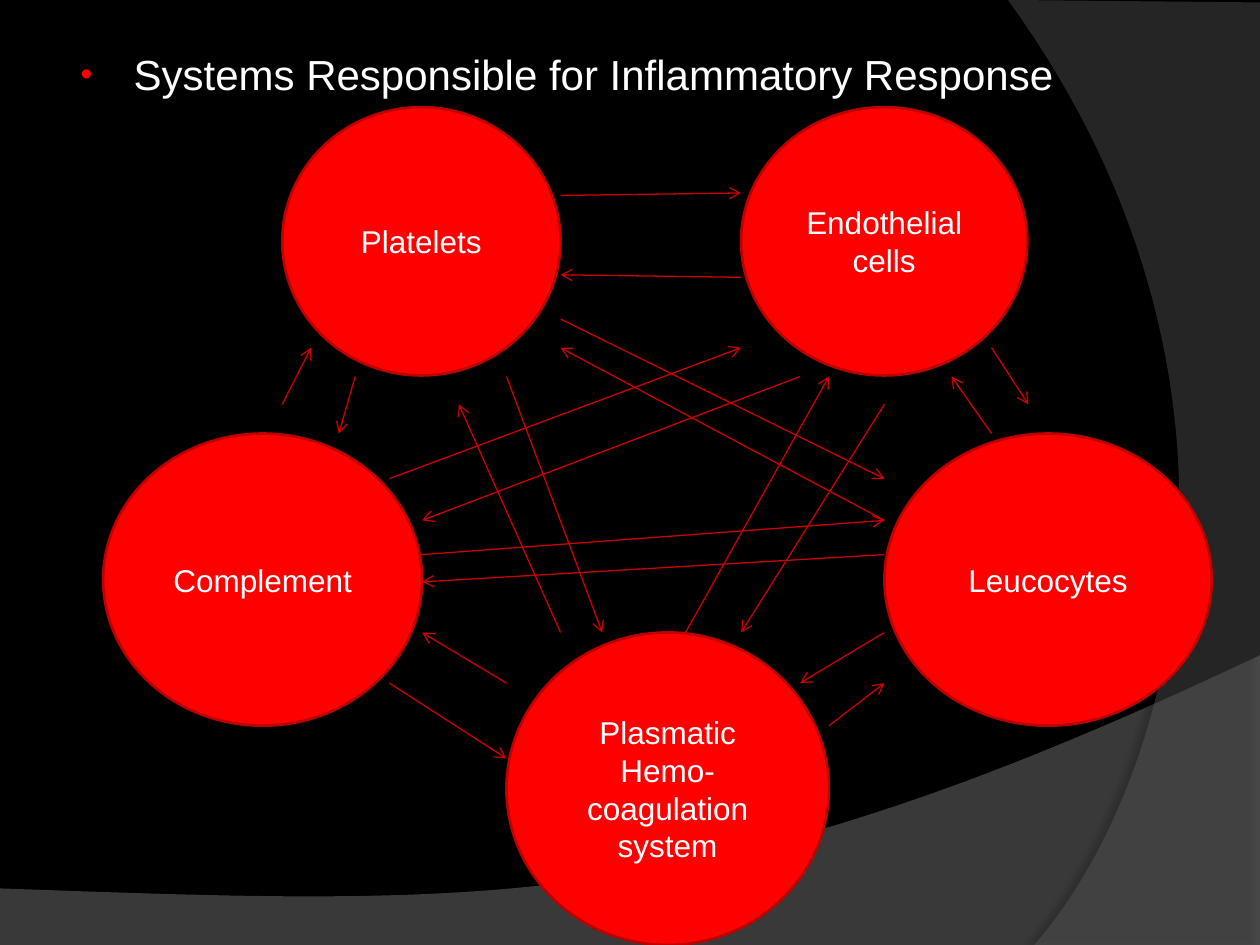
from lxml import etree
from pptx import Presentation
from pptx import util as u
from pptx.dml.color import RGBColor
from pptx.enum import shapes, text
from pptx.oxml import parse_xml
from pptx.oxml.ns import qn, nsdecls

BLACK = RGBColor(0x00, 0x00, 0x00)
WHITE = RGBColor(0xFF, 0xFF, 0xFF)
RED = RGBColor(0xFF, 0x00, 0x00)
EDGE = RGBColor(0xBD, 0x00, 0x00)
ARROW = RGBColor(0xCC, 0x00, 0x00)
GREY = RGBColor(0x7F, 0x7F, 0x7F)
DARK = RGBColor(0x5E, 0x5E, 0x5E)


def write(shape, words, size=18, color=WHITE, align=text.PP_ALIGN.CENTER,
          anchor=text.MSO_ANCHOR.MIDDLE):
    frame = shape.text_frame
    frame.word_wrap = True
    frame.auto_size = text.MSO_AUTO_SIZE.NONE
    frame.vertical_anchor = anchor
    para = frame.paragraphs[0]
    para.alignment = align
    run = para.add_run()
    run.text = words
    run.font.size = u.Pt(size)
    run.font.name = "Arial"
    run.font.color.rgb = color
    return para


def curve(start, c1, c2, end, steps=60):
    """Points along a cubic curve, both ends included."""
    for i in range(steps + 1):
        t = i / steps
        s = 1 - t
        yield tuple(s**3 * a + 3 * s * s * t * b + 3 * s * t * t * c + t**3 * d
                    for a, b, c, d in zip(start, c1, c2, end))


deck = Presentation()
deck.slide_width, deck.slide_height = u.Cm(25.4), u.Cm(19.05)
slide = deck.slides.add_slide(deck.slide_layouts[1])
slide.background.fill.solid()
slide.background.fill.fore_color.rgb = BLACK
items = slide.shapes
title = items.title._element
title.getparent().remove(title)

# Background waves: corners, curve, colour, opacity, then shadow opacity, blur, distance, angle
waves = [
    ([(0, 17.91), (0, 19.08)],
     [(25.4, 13.21), (14.2, 18.52), (9.93, 18.26), (0, 17.91)],
     [(25.4, 19.08)], GREY, 45, (35, 4, 3.5, 270)),
    ([(25.4, 0.05), (25.4, 19.05)],
     [(20.85, 19.05), (23.75, 15.72), (25.86, 7.62), (20.32, 0)],
     [], DARK, 40, (45, 4, 4, 180)),
]
for first, bend, more, color, alpha, (dim, blur, dist, angle) in waves:
    points = [(u.Cm(x), u.Cm(y)) for x, y in first + more + list(curve(*bend))]
    pen = items.build_freeform(*points[0])
    pen.add_line_segments(points[1:], close=True)
    wave = pen.convert_to_shape()
    wave.fill.solid()
    wave.fill.fore_color.rgb = color
    wave.line.fill.background()
    wave.shadow.inherit = False
    props = wave._element.spPr
    tint = props.find(qn("a:solidFill"))[0]
    etree.SubElement(tint, qn("a:alpha"), val=str(alpha * 1000))
    props.find(qn("a:effectLst")).append(parse_xml(
        f'<a:outerShdw {nsdecls("a")} blurRad="{u.Pt(blur)}" dist="{u.Pt(dist)}" '
        f'dir="{angle * 60000}" algn="ctr" rotWithShape="0"><a:srgbClr val="{BLACK}">'
        f'<a:alpha val="{dim * 1000}"/></a:srgbClr></a:outerShdw>'))

# Heading, in front of the waves
body = slide.placeholders[1]
items._spTree.append(body._element)
body.left, body.top = u.Cm(1.27), u.Cm(0.86)
body.width, body.height = u.Cm(23.16), u.Cm(17.35)
head = write(body, "Systems Responsible for Inflammatory Response", size=24,
             align=text.PP_ALIGN.LEFT, anchor=text.MSO_ANCHOR.TOP)
form = head._p.get_or_add_pPr()
form.set("marL", str(u.Cm(1.17)))
form.set("indent", str(u.Cm(-1.07)))
tone = etree.SubElement(form, qn("a:buClr"))
etree.SubElement(tone, qn("a:srgbClr"), val=str(RED))
etree.SubElement(form, qn("a:buSzPct"), val="80000")
etree.SubElement(form, qn("a:buFont"), typeface="Arial")
etree.SubElement(form, qn("a:buChar"), char="•")

# The five systems
systems = [
    ("Endothelial cells", 14.94, 2.16, 5.77, 5.41),
    ("Platelets", 5.69, 2.16, 5.61, 5.41),
    ("Plasmatic Hemo-coagulation system", 10.21, 12.75, 6.5, 6.3),
    ("Leucocytes", 17.83, 8.74, 6.6, 5.89),
    ("Complement", 2.08, 8.74, 6.43, 5.89),
]
for name, *box in systems:
    disc = items.add_shape(shapes.MSO_SHAPE.OVAL, *map(u.Cm, box))
    disc.shadow.inherit = False
    disc.fill.solid()
    disc.fill.fore_color.rgb = RED
    disc.line.color.rgb = EDGE
    disc.line.width = u.Pt(1.5)
    write(disc, name)

# Arrows, one each way between every two systems
arrows = [
    # Platelets and endothelial cells
    (11.3, 3.94, 14.94, 3.89), (14.94, 5.59, 11.3, 5.54),
    # Endothelial cells and leucocytes
    (19.99, 7.01, 20.73, 8.15), (19.99, 8.74, 19.18, 7.59),
    # Leucocytes and plasmatic system
    (17.83, 12.75, 16.13, 13.77), (16.71, 14.63, 17.83, 13.77),
    # Plasmatic system and complement
    (10.21, 13.77, 8.51, 12.75), (7.85, 13.77, 10.21, 15.29),
    # Complement and platelets
    (5.69, 8.15, 6.27, 7.01), (7.16, 7.59, 6.83, 8.74),
    # Complement and endothelial cells
    (7.85, 9.65, 14.94, 7.01), (16.13, 7.59, 8.51, 10.49),
    # Complement and leucocytes
    (8.51, 11.18, 17.83, 10.49), (17.83, 11.18, 8.51, 11.73),
    # Plasmatic system and platelets
    (11.3, 12.75, 9.25, 8.15), (10.21, 7.59, 12.14, 12.75),
    # Plasmatic system and endothelial cells
    (13.82, 12.75, 16.71, 7.59), (17.83, 8.15, 14.94, 12.75),
    # Platelets and leucocytes
    (11.3, 6.43, 17.83, 9.65), (17.83, 10.49, 11.3, 7.01),
]
for ends in arrows:
    link = items.add_connector(shapes.MSO_CONNECTOR.STRAIGHT, *map(u.Cm, ends))
    link.line.color.rgb = ARROW
    link.line.width = u.Pt(0.75)
    etree.SubElement(link.line._get_or_add_ln(), qn("a:tailEnd"), type="arrow")
    etree.SubElement(link._element.spPr, qn("a:effectLst"))

deck.save("out.pptx")
